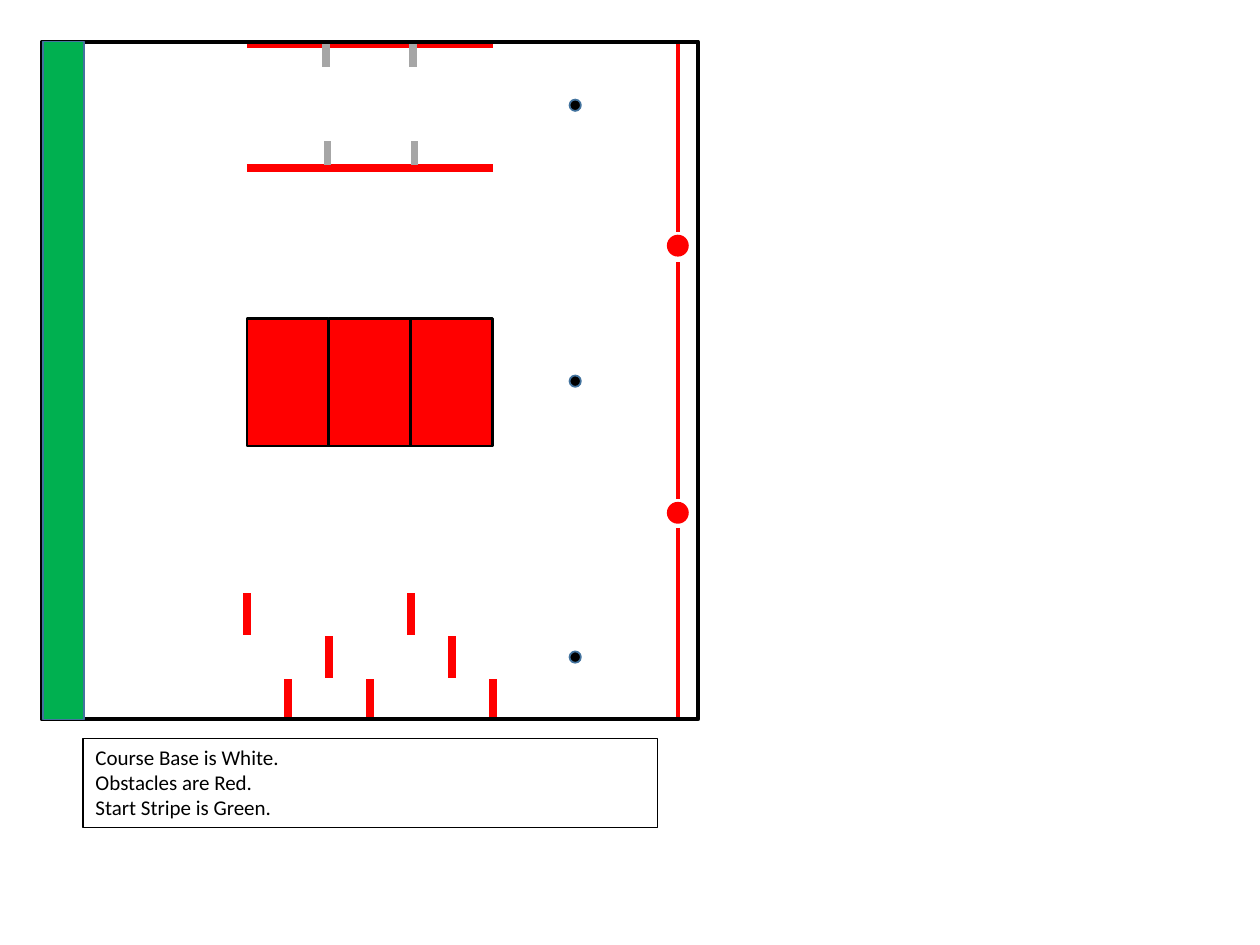
import pptx
import pptx.util
import pptx.dml.color
import pptx.enum.shapes
import pptx.enum.text
import pptx.oxml.ns
import lxml.etree

Inches = pptx.util.Inches
Pt = pptx.util.Pt
RGBColor = pptx.dml.color.RGBColor
SHAPE = pptx.enum.shapes.MSO_SHAPE

RED = RGBColor(0xFF, 0x00, 0x00)
BLACK = RGBColor(0x00, 0x00, 0x00)
WHITE = RGBColor(0xFF, 0xFF, 0xFF)
GRAY = RGBColor(0xA6, 0xA6, 0xA6)
GREEN = RGBColor(0x00, 0xB0, 0x50)
BLUE = RGBColor(0x43, 0x73, 0x9E)


def add_bar(shapes, start, end, color, width):
    bar = shapes.add_connector(
        pptx.enum.shapes.MSO_CONNECTOR.STRAIGHT,
        *[Inches(value) for value in (*start, *end)])
    bar.line.color.rgb = color
    bar.line.width = Pt(width)
    properties = bar._element.spPr
    lxml.etree.SubElement(properties, pptx.oxml.ns.qn("a:effectLst"))


def add_form(shapes, kind, box, fill, outline, width):
    form = shapes.add_shape(kind, *[Inches(value) for value in box])
    form.shadow.inherit = False
    if fill is None:
        form.fill.background()
    else:
        form.fill.solid()
        form.fill.fore_color.rgb = fill
    form.line.color.rgb = outline
    form.line.width = Pt(width)
    return form


def add_slalom(shapes, left, top, width, height):
    column = width / 6
    pitch = height / 3
    gate_columns = [(0, 4), (2, 5), (1, 3, 6)]
    for row, columns in enumerate(gate_columns):
        y = top + row * pitch
        for index in columns:
            x = left + index * column
            add_bar(shapes, (x, y), (x, y + 0.33), RED, 4.5)


def add_blocks(shapes, left, top, width, height):
    blocks = shapes.add_group_shape()
    block_width = width / 3
    for index in range(3):
        box = (left + index * block_width, top, block_width, height)
        add_form(blocks.shapes, SHAPE.RECTANGLE, box, RED, BLACK, 1.5)


def add_tunnel(shapes, left, top, width, height):
    for y in (top, top + height):
        add_bar(shapes, (left, y), (left + width, y), RED, 4.5)
    for offset in (0.63, 1.32):
        x = left + offset
        add_bar(shapes, (x, top), (x, top + 0.18), GRAY, 4.5)
        add_bar(shapes, (x + 0.01, top + height - 0.21),
                (x + 0.01, top + height - 0.02), GRAY, 4.5)


def add_markers(shapes, left, top, size, height):
    pitch = (height - size) / 2
    for index in range(3):
        box = (left, top + index * pitch, size, size)
        add_form(shapes, SHAPE.OVAL, box, BLACK, BLUE, 1)


def add_finish_line(shapes, left, top, width, height):
    x = left + width / 2
    for start, end in [(0, 1.51), (1.75, 3.63), (3.86, height)]:
        add_bar(shapes, (x, top + start), (x, top + end), RED, 2.25)
    for offset in (1.54, 3.66):
        box = (left, top + offset, width, width)
        add_form(shapes, SHAPE.OVAL, box, RED, RED, 1)


def add_legend(shapes, left, top, width, height):
    legend = add_form(shapes, SHAPE.RECTANGLE, (left, top, width, height),
                      WHITE, BLACK, 0.75)
    frame = legend.text_frame
    frame.word_wrap = True
    frame.auto_size = pptx.enum.text.MSO_AUTO_SIZE.SHAPE_TO_FIT_TEXT
    frame.vertical_anchor = pptx.enum.text.MSO_ANCHOR.TOP
    sentences = ["Course Base is White.", "Obstacles are Red.",
                 "Start Stripe is Green."]
    for index, sentence in enumerate(sentences):
        paragraph = frame.add_paragraph() if index else frame.paragraphs[0]
        paragraph.alignment = pptx.enum.text.PP_ALIGN.LEFT
        run = paragraph.add_run()
        run.text = sentence
        run.font.name = "Calibri"
        run.font.size = Pt(12)
        run.font.color.rgb = BLACK


def add_course_base(shapes, left, top, width, height):
    add_form(shapes, SHAPE.RECTANGLE, (left, top, width, height),
             None, BLACK, 2.25)
    add_form(shapes, SHAPE.RECTANGLE, (left + 0.01, top, 0.33, height),
             GREEN, BLUE, 1)


def main():
    presentation = pptx.Presentation()
    presentation.slide_width = Inches(10)
    presentation.slide_height = Inches(7.5)
    slide = presentation.slides.add_slide(presentation.slide_layouts[6])
    shapes = slide.shapes
    add_slalom(shapes, 1.96, 4.71, 1.95, 1.02)
    add_blocks(shapes, 1.96, 2.53, 1.95, 1.01)
    add_tunnel(shapes, 1.96, 0.35, 1.95, 0.98)
    add_markers(shapes, 4.52, 0.79, 0.09, 4.47)
    add_finish_line(shapes, 5.3, 0.33, 0.16, 5.38)
    add_legend(shapes, 0.66, 5.86, 4.56, 0.71)
    add_course_base(shapes, 0.33, 0.33, 5.21, 5.38)
    presentation.save("out.pptx")


if __name__ == "__main__":
    main()
